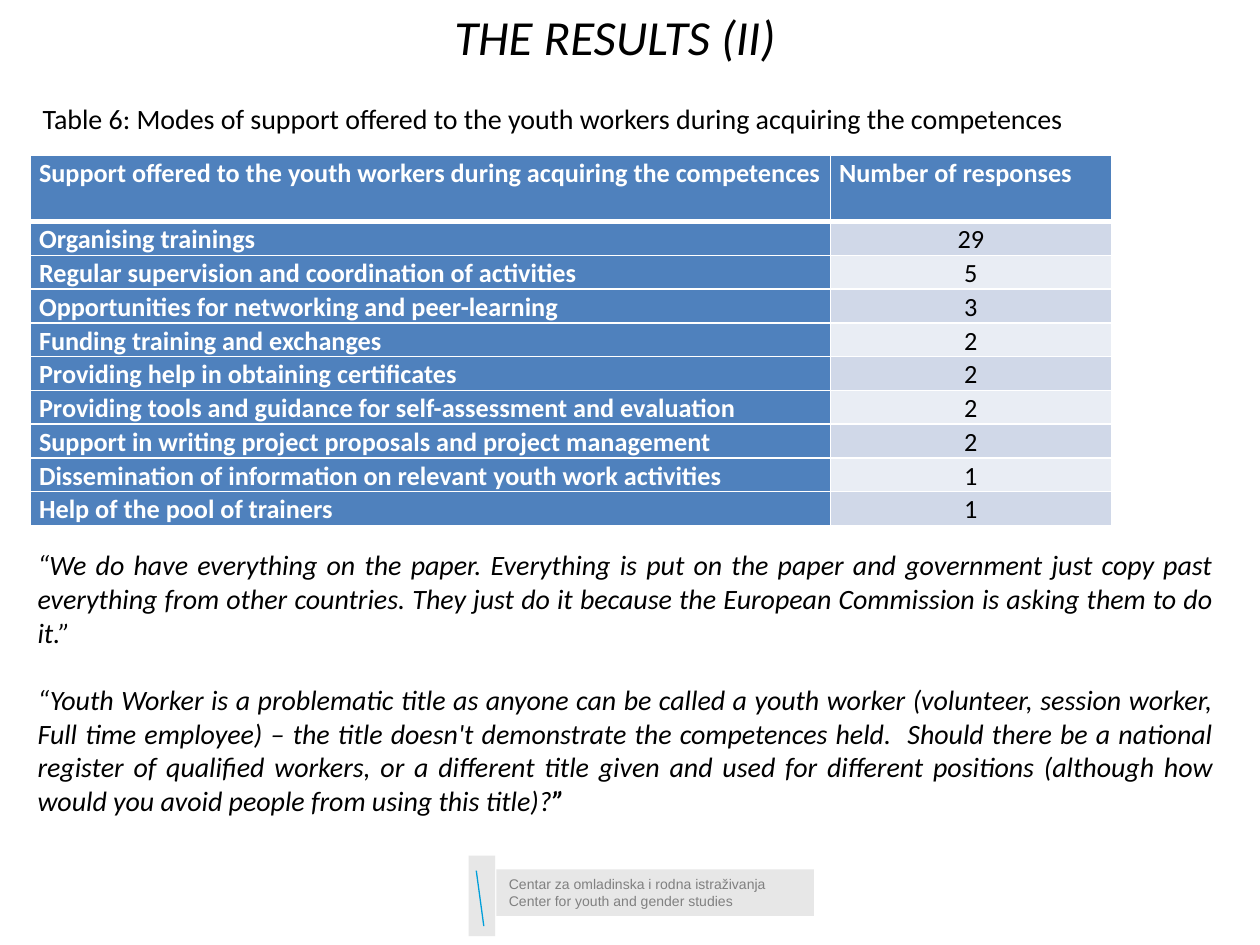
"""Build the slide on modes of support offered to youth workers."""
import lxml.etree
import pptx
import pptx.dml.color
import pptx.enum.shapes
import pptx.enum.text
import pptx.oxml.ns
import pptx.util
from pptx.util import Inches

ALIGN = pptx.enum.text.PP_ALIGN
ANCHOR = pptx.enum.text.MSO_ANCHOR
SHAPE = pptx.enum.shapes.MSO_SHAPE
COLORS = {
    "black": "000000",
    "white": "FFFFFF",
    "blue": "4F81BD",
    "band_dark": "D0D8E8",
    "band_light": "E9EDF4",
    "footer_fill": "E7E7E7",
    "footer_text": "808080",
    "footer_line": "009FDA",
}
TABLE_HEADER = ("Support offered to the youth workers during acquiring the competences",
                "Number of responses")
TABLE_ROWS = [
    ("Organising trainings", 29),
    ("Regular supervision and coordination of activities", 5),
    ("Opportunities for networking and peer-learning", 3),
    ("Funding training and exchanges", 2),
    ("Providing help in obtaining certificates", 2),
    ("Providing tools and guidance for self-assessment and evaluation", 2),
    ("Support in writing project proposals and project management", 2),
    ("Dissemination of information on relevant youth work activities", 1),
    ("Help of the pool of trainers", 1),
]
QUOTES = [
    "“We do have everything on the paper. Everything is put on the paper and government "
    "just copy past everything from other countries. They just do it because the European "
    "Commission is asking them to do it.”",
    "“Youth Worker is a problematic title as anyone can be called a youth worker (volunteer, "
    "session worker, Full time employee) – the title doesn't demonstrate the competences "
    "held.  Should there be a national register of qualified workers, or a different title "
    "given and used for different positions (although how would you avoid people from using "
    "this title)?",
]


def rgb(name):
    return pptx.dml.color.RGBColor.from_string(COLORS[name])


def format_run(run, size, color, font, bold, italic):
    run.font.size = pptx.util.Pt(size)
    run.font.name = font
    run.font.color.rgb = rgb(color)
    run.font.bold = bold
    run.font.italic = italic


def write_text(frame, text, size=16, color="black", font="Calibri", bold=False, italic=False,
               align=ALIGN.JUSTIFY, spacing=None, before=0, bold_end=""):
    """Write one paragraph, using the empty first paragraph of the frame if there is one."""
    first = frame.paragraphs[0]
    paragraph = frame.add_paragraph() if first.runs else first
    paragraph.alignment = align
    paragraph.space_before = pptx.util.Pt(before)
    if spacing:
        paragraph.line_spacing = spacing
    for words, heavy in ((text, bold), (bold_end, True)):
        if words:
            run = paragraph.add_run()
            run.text = words
            format_run(run, size, color, font, heavy, italic)
    return paragraph


def add_title(slide, text):
    title = slide.shapes.title
    title.left, title.top = Inches(0.43), Inches(0)
    title.width, title.height = Inches(8.9), Inches(0.57)
    title.text_frame.vertical_anchor = ANCHOR.TOP
    title.text_frame.auto_size = pptx.enum.text.MSO_AUTO_SIZE.NONE
    write_text(title.text_frame, text, size=28, italic=True, align=ALIGN.CENTER)


def add_text_box(slide, left, top, width, height):
    box = slide.shapes.add_textbox(Inches(left), Inches(top), Inches(width), Inches(height))
    box.text_frame.word_wrap = True
    return box.text_frame


def add_rectangle(slide, left, top, width, height, color):
    shape = slide.shapes.add_shape(SHAPE.RECTANGLE, Inches(left), Inches(top),
                                   Inches(width), Inches(height))
    shape.shadow.inherit = False
    shape.fill.solid()
    shape.fill.fore_color.rgb = rgb(color)
    shape.line.fill.background()
    return shape


def add_line(slide, start, end, color, width):
    line = slide.shapes.add_connector(pptx.enum.shapes.MSO_CONNECTOR.STRAIGHT,
                                      *map(Inches, start + end))
    line.line.color.rgb = rgb(color)
    line.line.width = pptx.util.Pt(width)
    properties = line._element.spPr
    lxml.etree.SubElement(properties, pptx.oxml.ns.qn("a:effectLst"))


def add_footer(slide):
    add_rectangle(slide, 3.72, 6.79, 0.21, 0.64, "footer_fill")
    add_line(slide, (3.78, 6.91), (3.84, 7.35), "footer_line", 0.75)
    frame = add_rectangle(slide, 3.94, 6.9, 2.52, 0.37, "footer_fill").text_frame
    frame.word_wrap = True
    for text in ("Centar za omladinska i rodna istraživanja",
                 "Center for youth and gender studies"):
        write_text(frame, text, size=8, color="footer_text", font="Arial", align=ALIGN.LEFT)


def set_borders(cell, top, bottom):
    properties = cell._tc.get_or_add_tcPr()
    for side, width in (("L", 1), ("R", 1), ("T", top), ("B", bottom)):
        border = lxml.etree.SubElement(properties, pptx.oxml.ns.qn(f"a:ln{side}"),
                                       w=str(pptx.util.Pt(width)))
        fill = lxml.etree.SubElement(border, pptx.oxml.ns.qn("a:solidFill"))
        lxml.etree.SubElement(fill, pptx.oxml.ns.qn("a:srgbClr"), val=COLORS["white"])


def fill_cell(cell, text, fill, top=1, bottom=1, **text_format):
    cell.margin_left = cell.margin_right = Inches(0.07)
    cell.margin_top = cell.margin_bottom = 0
    set_borders(cell, top, bottom)
    cell.fill.solid()
    cell.fill.fore_color.rgb = rgb(fill)
    write_text(cell.text_frame, text, size=15, spacing=1.07, **text_format)


def add_support_table(slide):
    heading = {"fill": "blue", "color": "white", "bold": True}
    table = slide.shapes.add_table(len(TABLE_ROWS) + 1, 2, Inches(0.24), Inches(1.23),
                                   Inches(8.58), Inches(2.94)).table
    for column, width in zip(table.columns, (6.35, 2.23)):
        column.width = Inches(width)
    for row in table.rows:
        row.height = Inches(0.267)
    table.rows[0].height = Inches(0.53)
    for column, text in enumerate(TABLE_HEADER):
        fill_cell(table.cell(0, column), text, bottom=3, **heading)
    for row, (support, responses) in enumerate(TABLE_ROWS, start=1):
        top = 3 if row == 1 else 1
        band = "band_dark" if row % 2 else "band_light"
        fill_cell(table.cell(row, 0), support, top=top, **heading)
        fill_cell(table.cell(row, 1), str(responses), band, top=top, align=ALIGN.CENTER)


def main():
    presentation = pptx.Presentation()
    presentation.slide_width, presentation.slide_height = Inches(10), Inches(7.5)
    slide = presentation.slides.add_slide(presentation.slide_layouts[5])
    add_footer(slide)
    caption = add_text_box(slide, 0.24, 0.76, 9.29, 0.4)
    write_text(caption, "Table 6: Modes of support offered to the youth workers "
                        "during acquiring the competences")
    add_title(slide, "THE RESULTS (II)")
    add_support_table(slide)
    quotes = add_text_box(slide, 0.2, 4.3, 9.53, 2.56)
    write_text(quotes, QUOTES[0], italic=True)
    write_text(quotes, QUOTES[1], italic=True, before=19.5, bold_end="”")
    presentation.save("out.pptx")


if __name__ == "__main__":
    main()
